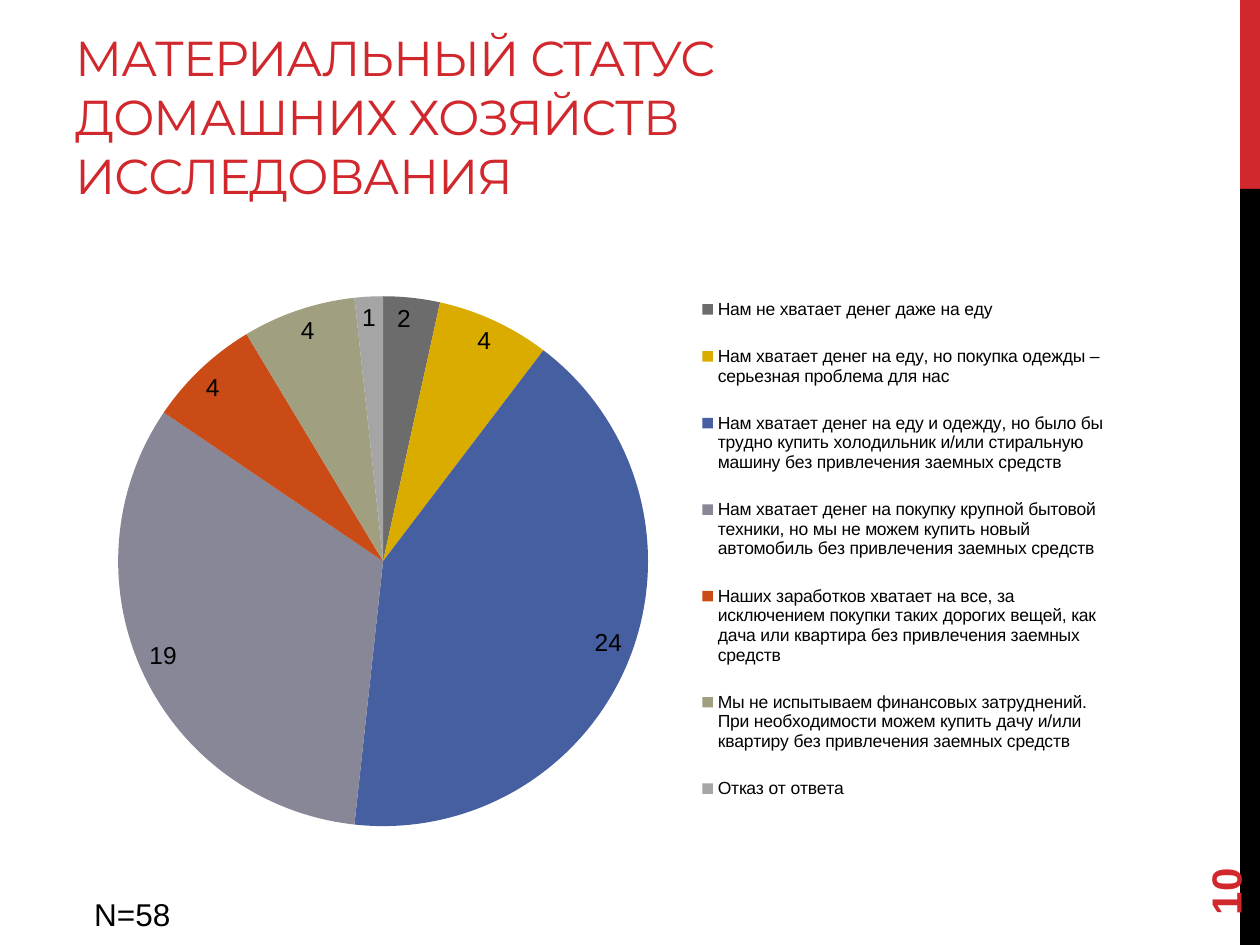
from dataclasses import dataclass

from lxml import etree
from pptx import Presentation
from pptx import util as u
from pptx.chart.data import CategoryChartData
from pptx.dml.color import RGBColor
from pptx.enum import chart as charts, shapes, text
from pptx.oxml.ns import qn


@dataclass(frozen=True)
class Theme:
    accent: str = "D1282E"
    ink: str = "000000"
    slices: tuple = ("6C6C6C", "DAAC00", "465FA0", "878798", "CB4B16", "A0A080", "A5A5A5")
    title_font: str = "Montserrat"
    body_font: str = "Arial"
    title_size: int = 28
    number_size: int = 24
    note_size: int = 18
    label_size: int = 14
    legend_size: int = 10


ANSWERS = (
    ("Нам не хватает денег даже на еду", 2),
    ("Нам хватает денег на еду, но покупка одежды – серьезная проблема для нас", 4),
    ("Нам хватает денег на еду и одежду, но было бы трудно купить холодильник "
     "и/или стиральную машину без привлечения заемных средств", 24),
    ("Нам хватает денег на покупку крупной бытовой техники, но мы не можем купить "
     "новый автомобиль без привлечения заемных средств", 19),
    ("Наших заработков хватает на все, за исключением покупки таких дорогих вещей, "
     "как дача или квартира без привлечения заемных средств", 4),
    ("Мы не испытываем финансовых затруднений. При необходимости можем купить дачу "
     "и/или квартиру без привлечения заемных средств", 4),
    ("Отказ от ответа", 1),
)


def assign(target, values):
    for name, value in values.items():
        setattr(target, name, value)


def cm(*lengths):
    return [u.Cm(length) for length in lengths]


def set_layout(element, x, y, w, h, inner=False):
    """Fix a chart part at fractions of the chart's width and height."""
    for old in element.findall(qn("c:layout")):
        element.remove(old)
    layout = etree.Element(qn("c:layout"))
    manual = etree.SubElement(layout, qn("c:manualLayout"))
    values = {"layoutTarget": "inner"} if inner else {}
    values.update(xMode="edge", yMode="edge", x=x, y=y, w=w, h=h)
    for name, value in values.items():
        etree.SubElement(manual, qn(f"c:{name}")).set("val", str(value))
    position = element.find(qn("c:legendPos"))
    element.insert(0 if position is None else 1, layout)


class SlideBuilder:
    """Holds the theme and the current page."""

    def __init__(self, deck, theme):
        self.theme = theme
        self.page = deck.slides.add_slide(deck.slide_layouts[5])

    def style(self, font, size, color, name=None, bold=False):
        assign(font, {"name": name or self.theme.body_font, "size": u.Pt(size), "bold": bold})
        font.color.rgb = RGBColor.from_string(color)

    def bar(self, area, color):
        box = self.page.shapes.add_shape(shapes.MSO_SHAPE.RECTANGLE, *cm(*area))
        box.shadow.inherit = False
        box.fill.solid()
        box.fill.fore_color.rgb = RGBColor.from_string(color)
        box.line.fill.background()

    def add_words(self, box, words, size, color, **font):
        para = box.text_frame.paragraphs[0]
        para.alignment = text.PP_ALIGN.LEFT
        span = para.add_run()
        span.text = words
        self.style(span.font, size, color, **font)
        return span

    def title(self, words, area):
        box = self.page.shapes.title
        assign(box, dict(zip(("left", "top", "width", "height"), cm(*area))))
        assign(box.text_frame, {"vertical_anchor": text.MSO_ANCHOR.BOTTOM, "word_wrap": True,
                                "auto_size": text.MSO_AUTO_SIZE.NONE})
        span = self.add_words(box, words, self.theme.title_size, self.theme.accent,
                              name=self.theme.title_font)
        span.font._element.set("spc", "-60")

    def label(self, words, area, size, color, rotation=0, bold=False, **frame):
        box = self.page.shapes.add_textbox(*cm(*area))
        box.rotation = rotation
        assign(box.text_frame, frame)
        self.add_words(box, words, size, color, bold=bold)

    def pie(self, answers, area):
        data = CategoryChartData()
        data.categories = [answer for answer, _ in answers]
        data.add_series("Series 1", [count for _, count in answers])
        chart = self.page.shapes.add_chart(charts.XL_CHART_TYPE.PIE, *cm(*area), data).chart
        self.style(chart.font, self.theme.legend_size, self.theme.ink)
        assign(chart, {"has_title": False, "has_legend": True})
        assign(chart.legend, {"position": charts.XL_LEGEND_POSITION.RIGHT,
                              "include_in_layout": False})
        plot = chart.plots[0]
        assign(plot, {"vary_by_categories": True, "has_data_labels": True})
        assign(plot.data_labels, {"show_value": True, "show_percentage": False,
                                  "position": charts.XL_LABEL_POSITION.INSIDE_END})
        self.style(plot.data_labels.font, self.theme.label_size, self.theme.ink)
        for index, color in enumerate(self.theme.slices):
            fill = plot.series[0].points[index].format.fill
            fill.solid()
            fill.fore_color.rgb = RGBColor.from_string(color)
        plot_area = chart._chartSpace.find(".//" + qn("c:plotArea"))
        set_layout(plot_area, 0.05, 0.09, 0.51, 0.88, inner=True)
        set_layout(chart.legend._element, 0.6, 0.05, 0.4, 0.92)


def main():
    deck = Presentation()
    assign(deck, {"slide_width": u.Cm(25.4), "slide_height": u.Cm(19.05)})
    theme = Theme()
    slide = SlideBuilder(deck, theme)
    slide.bar((25, 0, 0.4, 3.81), theme.accent)
    slide.bar((25, 3.81, 0.4, 15.24), theme.ink)
    slide.title("МАТЕРИАЛЬНЫЙ СТАТУС ДОМАШНИХ ХОЗЯЙСТВ ИССЛЕДОВАНИЯ",
                (1.27, 0.43, 16.08, 3.81))
    slide.label("10", (22.86, 16.36, 3.66, 1.02), theme.number_size, theme.accent,
                rotation=270, bold=True, word_wrap=True,
                vertical_anchor=text.MSO_ANCHOR.MIDDLE)
    slide.pie(ANSWERS, (1.27, 4.88, 21.16, 12.14))
    slide.label("N=58", (1.65, 17.91, 2.06, 1.02), theme.note_size, theme.ink,
                word_wrap=False, auto_size=text.MSO_AUTO_SIZE.SHAPE_TO_FIT_TEXT)
    deck.save("out.pptx")


if __name__ == "__main__":
    main()
